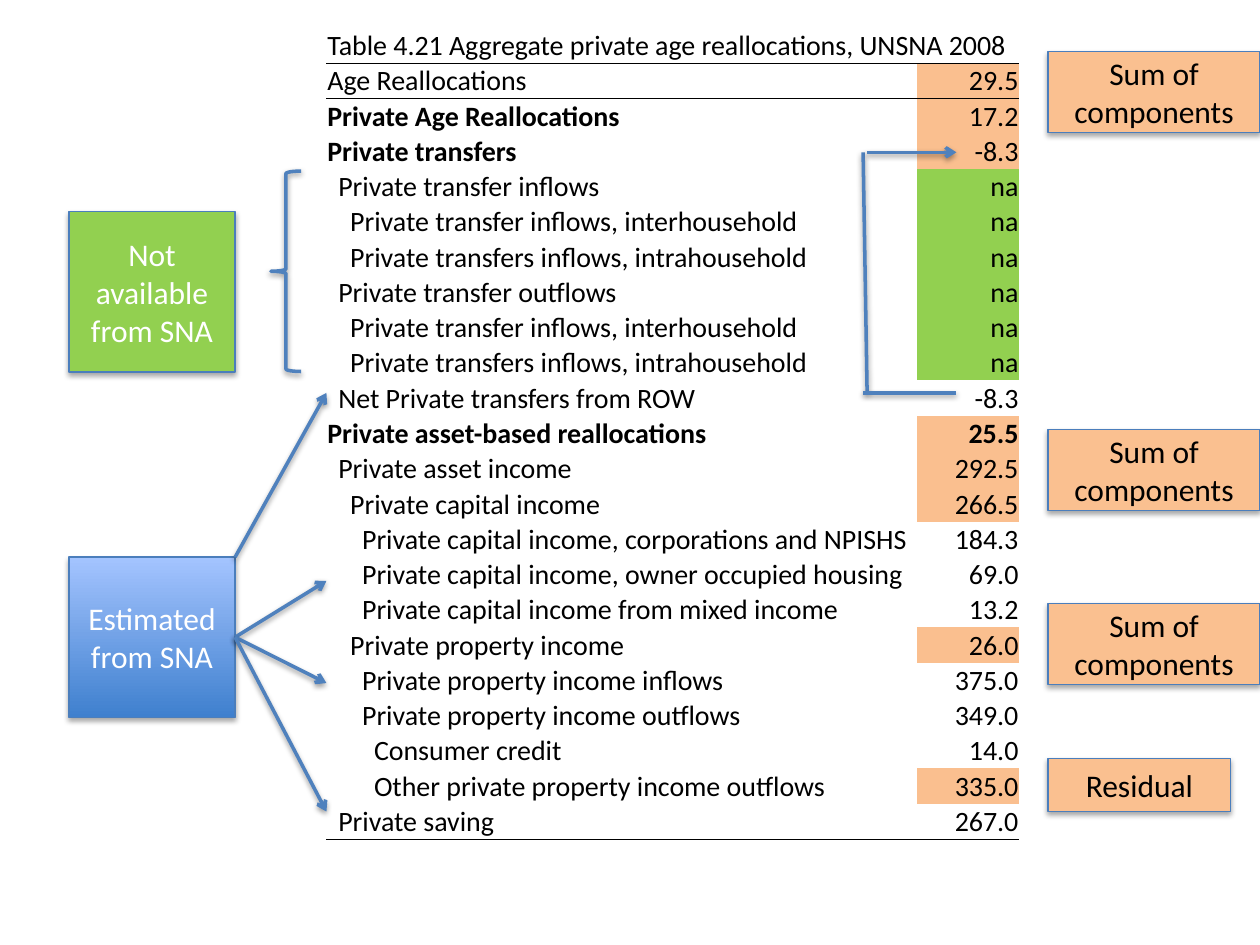
from dataclasses import dataclass
from typing import NamedTuple, Optional

from pptx import Presentation
from pptx.dml.color import RGBColor as RGB
from pptx.enum.shapes import MSO_CONNECTOR as Conn, MSO_SHAPE as Shape
from pptx.enum.text import MSO_ANCHOR as Anchor, PP_ALIGN as Align
from pptx.oxml import parse_xml
from pptx.oxml.ns import nsdecls, qn
from pptx.util import Cm, Pt


@dataclass(frozen=True)
class Theme:
    font: str = "Calibri"
    table_size: int = 16
    box_size: int = 18
    black: str = "000000"
    white: str = "FFFFFF"
    total: str = "FABF8F"
    missing: str = "92D050"
    label: str = "FAC090"
    grad_bottom: str = "3F80CE"
    grad_top: str = "A4C4FF"
    outline: str = "4B7EBC"
    arrow: str = "4F81BD"


T = Theme()
NO_STYLE = "{2D5ABB26-0587-4C30-8999-92F81FD0307C}"


class Row(NamedTuple):
    label: str
    value: str
    level: int = 0
    fill: Optional[str] = None
    bold_label: bool = False
    bold_value: bool = False


class Box(NamedTuple):
    text: str
    x: float
    y: float
    w: float
    h: float
    fill: Optional[str] = T.label
    color: str = T.black


class Line(NamedTuple):
    x1: float
    y1: float
    x2: float
    y2: float
    arrow: bool = False


TITLE = "Table 4.21 Aggregate private age reallocations, UNSNA 2008"
FLOWS = [
    Row("Private transfer inflows, interhousehold", "na", 2, T.missing),
    Row("Private transfers inflows, intrahousehold", "na", 2, T.missing),
]
ROWS = [
    Row("Age Reallocations", "29.5", 0, T.total),
    Row("Private Age Reallocations", "17.2", 0, T.total, True),
    Row("Private transfers", "-8.3", 0, T.total, True),
    Row("Private transfer inflows", "na", 1, T.missing),
    *FLOWS,
    Row("Private transfer outflows", "na", 1, T.missing),
    *FLOWS,
    Row("Net Private transfers from ROW", "-8.3", 1),
    Row("Private asset-based reallocations", "25.5", 0, T.total, True, True),
    Row("Private asset income", "292.5", 1, T.total),
    Row("Private capital income", "266.5", 2, T.total),
    Row("Private capital income, corporations and NPISHS", "184.3", 3),
    Row("Private capital income, owner occupied housing", "69.0", 3),
    Row("Private capital income from mixed income", "13.2", 3),
    Row("Private property income", "26.0", 2, T.total),
    Row("Private property income inflows", "375.0", 3),
    Row("Private property income outflows", "349.0", 3),
    Row("Consumer credit", "14.0", 4),
    Row("Other private property income outflows", "335.0", 4, T.total),
    Row("Private saving", "267.0", 1),
]

TABLE_X, TABLE_Y = 6.58, 0.56
NET_Y = 7.92
BRACKET = [
    Line(17.48, NET_Y, 17.4, 3.07),
    Line(17.48, 3.07, 19.28, 3.07, True),
    Line(17.4, NET_Y, 19.28, NET_Y),
]
SIDE_X = 21.13
LABELS = [Box("Residual", SIDE_X, 15.29, 3.68, 1.07)] + [
    Box("Sum of components", SIDE_X, y, 4.27, 1.63) for y in (1.04, 8.66, 12.17)
]
MISSING = Box("Not available from SNA", 1.39, 4.27, 3.35, 3.23, T.missing, T.white)
ESTIMATED = Box("Estimated from SNA", 1.39, 11.23, 3.35, 3.23, None, T.white)
TARGETS = (11.71, 13.77, 16.36)


def write(tf, text: str, *, size: int, color: str = T.black, bold: bool = False,
          align=Align.LEFT) -> None:
    p = tf.paragraphs[0]
    p.alignment = align
    r = p.add_run()
    r.text = text
    r.font.name, r.font.size, r.font.bold = T.font, Pt(size), bold
    r.font.color.rgb = RGB.from_string(color)


def add_shadow(sp, dist: int, alpha: int) -> None:
    sp._element.spPr.append(parse_xml(
        f'<a:effectLst {nsdecls("a")}><a:outerShdw blurRad="40000" dist="{dist}" '
        f'dir="5400000" rotWithShape="0"><a:srgbClr val="{T.black}">'
        f'<a:alpha val="{alpha}"/></a:srgbClr></a:outerShdw></a:effectLst>'))


def set_line(sp, color: str, width: float) -> None:
    sp.line.color.rgb = RGB.from_string(color)
    sp.line.width = Pt(width)


def paint(fill, color: Optional[str]) -> None:
    if color:
        fill.solid()
        fill.fore_color.rgb = RGB.from_string(color)
    else:
        fill.background()


def add_box(s, box: Box):
    sp = s.shapes.add_shape(Shape.RECTANGLE, Cm(box.x), Cm(box.y), Cm(box.w), Cm(box.h))
    if box.fill:
        paint(sp.fill, box.fill)
    else:
        sp.fill.gradient()
        sp.fill.gradient_angle = 90
        for stop, color in zip(sp.fill.gradient_stops, (T.grad_bottom, T.grad_top)):
            stop.color.rgb = RGB.from_string(color)
    set_line(sp, T.outline, 0.75)
    add_shadow(sp, 23000, 35000)
    sp.text_frame.word_wrap = True
    write(sp.text_frame, box.text, size=T.box_size, color=box.color, align=Align.CENTER)
    return sp


def add_line(s, line: Line, source=None) -> None:
    cn = s.shapes.add_connector(Conn.STRAIGHT, Cm(line.x1), Cm(line.y1),
                                Cm(line.x2), Cm(line.y2))
    if source is not None:
        cn.begin_connect(source, 3)
    set_line(cn, T.arrow, 2)
    if line.arrow:
        cn.line._get_or_add_ln().append(
            parse_xml(f'<a:tailEnd {nsdecls("a")} type="arrow"/>'))
    add_shadow(cn, 20000, 38000)


def add_brace(s, x: float, y: float, w: float, h: float) -> None:
    sp = s.shapes.add_shape(Shape.LEFT_BRACE, Cm(x), Cm(y), Cm(w), Cm(h))
    paint(sp.fill, None)
    set_line(sp, T.arrow, 2)
    add_shadow(sp, 20000, 38000)


def fill_cell(cell, text: str, *, level: int = 0, fill: Optional[str] = None, **fmt) -> None:
    cell.margin_left = Cm(max(0.02, 0.24 * level))
    cell.margin_right = cell.margin_top = Cm(0.02)
    cell.margin_bottom = 0
    cell.vertical_anchor = Anchor.BOTTOM
    paint(cell.fill, fill)
    write(cell.text_frame, text, size=T.table_size, **fmt)


def rule(row, side: str) -> None:
    for cell in row.cells:
        cell._tc.get_or_add_tcPr().insert(0, parse_xml(
            f'<a:ln{side} {nsdecls("a")} w="6350"><a:solidFill>'
            f'<a:srgbClr val="{T.black}"/></a:solidFill></a:ln{side}>'))


def add_reallocations(s) -> None:
    gf = s.shapes.add_table(len(ROWS) + 1, 2, Cm(TABLE_X), Cm(TABLE_Y), Cm(13.97), Cm(16.18))
    tbl = gf.table
    tbl.first_row = tbl.horz_banding = False
    tbl._tbl.tblPr.find(qn("a:tableStyleId")).text = NO_STYLE
    for col, width in zip(tbl.columns, (11.91, 2.06)):
        col.width = Cm(width)
    for row in tbl.rows:
        row.height = Cm(0.56)
    gf.height = Cm(16.18)
    tbl.cell(0, 0).merge(tbl.cell(0, 1))
    fill_cell(tbl.cell(0, 0), TITLE)
    for i, row in enumerate(ROWS, 1):
        fill_cell(tbl.cell(i, 0), row.label, level=row.level, bold=row.bold_label)
        fill_cell(tbl.cell(i, 1), row.value, fill=row.fill, bold=row.bold_value,
                  align=Align.RIGHT)
    for i, side in ((0, "B"), (1, "T"), (len(ROWS), "B")):
        rule(tbl.rows[i], side)


def main() -> None:
    prs = Presentation()
    prs.slide_width, prs.slide_height = Cm(25.4), Cm(19.05)
    s = prs.slides.add_slide(prs.slide_layouts[6])
    add_reallocations(s)
    for line in BRACKET:
        add_line(s, line)
    for box in LABELS:
        add_box(s, box)
    add_brace(s, 5.46, 3.45, 0.61, 4.04)
    add_box(s, MISSING)
    estimated = add_box(s, ESTIMATED)
    right, middle = ESTIMATED.x + ESTIMATED.w, ESTIMATED.y + ESTIMATED.h / 2
    add_line(s, Line(right, ESTIMATED.y, TABLE_X, NET_Y, True))
    for y in TARGETS:
        add_line(s, Line(right, middle, TABLE_X, y, True), estimated)
    prs.save("out.pptx")


if __name__ == "__main__":
    main()
